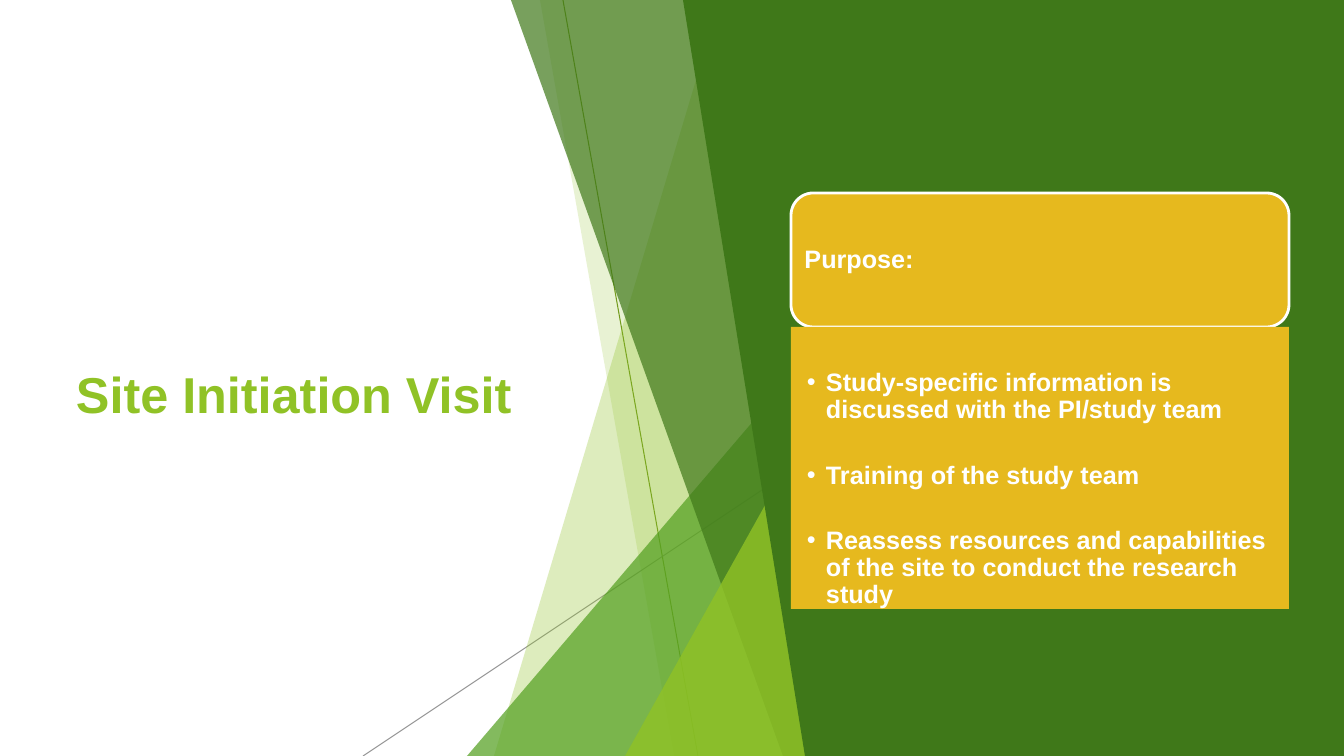
from lxml.etree import SubElement as sub
from pptx import Presentation
from pptx.dml.color import RGBColor as RGB
from pptx.enum.shapes import MSO_CONNECTOR as LINK, MSO_SHAPE as KIND
from pptx.enum.text import MSO_ANCHOR as ANCHOR, PP_ALIGN as ALIGN
from pptx.oxml.ns import qn
from pptx.util import Pt

SCALE = 914400 / 100.8
LIME, GREEN, DARK = "90C226", "54A021", "3F7819"
GOLD, WHITE = "E6B91E", "FFFFFF"
POINTS = [
    "Study-specific information is discussed with the PI/study team",
    "Training of the study team",
    "Reassess resources and capabilities of the site to conduct the research study",
]


def px(*vals):
    return [round(val * SCALE) for val in vals]


def paint(fill, hue, alpha=100):
    fill.solid()
    fill.fore_color.rgb = RGB.from_string(hue)
    if alpha < 100:
        node = fill._xPr.find(qn("a:solidFill"))[0]
        sub(node, qn("a:alpha"), val=str(alpha * 1000))


def style(item, **vals):
    for key, val in vals.items():
        setattr(item, key, val)


def finish(shape, hue, alpha=100):
    shape.shadow.inherit = False
    paint(shape.fill, hue, alpha)
    shape.line.fill.background()
    return shape


def add_band(slide, pts, hue, alpha=100):
    form = slide.shapes.build_freeform(*pts[0], scale=SCALE)
    form.add_line_segments(pts[1:], close=True)
    finish(form.convert_to_shape(), hue, alpha)


def add_box(slide, kind, box, hue, alpha=100):
    return finish(slide.shapes.add_shape(kind, *px(*box)), hue, alpha)


def add_peak(slide, box, hue, alpha):
    add_box(slide, KIND.ISOSCELES_TRIANGLE, box, hue, alpha).adjustments[0] = 1


def add_line(slide, ends, hue, alpha=100):
    line = slide.shapes.add_connector(LINK.STRAIGHT, *px(*ends))
    line.line.width = Pt(0.75)
    paint(line.line.fill, hue, alpha)
    sub(line._element.spPr, qn("a:effectLst"))


def set_frame(shape, pads, anchor):
    frame = shape.text_frame
    sides = ("margin_left", "margin_top", "margin_right", "margin_bottom")
    style(frame, word_wrap=True, vertical_anchor=anchor, **dict(zip(sides, px(*pads))))
    return frame


def write(para, text, size, hue, **form):
    style(para, alignment=ALIGN.LEFT, **form)
    run = para.add_run()
    run.text = text
    style(run.font, name="Arial", size=Pt(size), bold=True)
    paint(run.font.fill, hue)


def add_dot(para):
    props = para._p.get_or_add_pPr()
    left, = px(19)
    props.set("marL", str(left))
    props.set("indent", str(-left))
    sub(props, qn("a:buFont"), typeface="Arial")
    sub(props, qn("a:buChar"), char="•")


def add_title(slide):
    title = slide.shapes.title
    style(title, **dict(zip(("left", "top", "width", "height"), px(66, 280, 475, 265))))
    frame = set_frame(title, (10, 83, 10, 5), ANCHOR.TOP)
    write(frame.paragraphs[0], "Site Initiation Visit", 36, LIME)


def add_art(slide):
    add_line(slide, (563, 0, 698, 756), "6C921D")
    add_line(slide, (888, 406, 363, 756), "808080", 80)
    edge = [(826, 0), (826, 756)]
    add_band(slide, [(720, 0), *edge, (494, 756)], LIME, 30)
    add_band(slide, [(540, 0), *edge, (674, 756)], LIME, 20)
    add_peak(slide, (467, 336, 359, 420), GREEN, 72)
    add_band(slide, [(511, 0), *edge, (783, 756)], DARK, 70)
    add_peak(slide, (625, 396, 201, 360), LIME, 80)
    add_band(slide, [(683, 0), (1344, 0), (1344, 756), (805, 756)], DARK)


def add_card(slide):
    head = add_box(slide, KIND.ROUNDED_RECTANGLE, (791, 193, 498, 134), GOLD)
    paint(head.line.fill, WHITE)
    head.line.width = Pt(2)
    frame = set_frame(head, (7, 7, 7, 7), ANCHOR.MIDDLE)
    write(frame.paragraphs[0], "Purpose:", 18, WHITE, line_spacing=0.9)

    body = add_box(slide, KIND.RECTANGLE, (791, 327, 498, 282), GOLD)
    frame = set_frame(body, (16, 43, 16, 3), ANCHOR.TOP)
    for num, text in enumerate(POINTS):
        para = frame.add_paragraph() if num else frame.paragraphs[0]
        write(para, text, 18, WHITE, line_spacing=0.9, space_after=Pt(27))
        add_dot(para)


def main():
    deck = Presentation()
    deck.slide_width, deck.slide_height = px(1344, 756)
    slide = deck.slides.add_slide(deck.slide_layouts[5])
    add_art(slide)
    add_title(slide)
    add_card(slide)
    deck.save("out.pptx")


if __name__ == "__main__":
    main()
